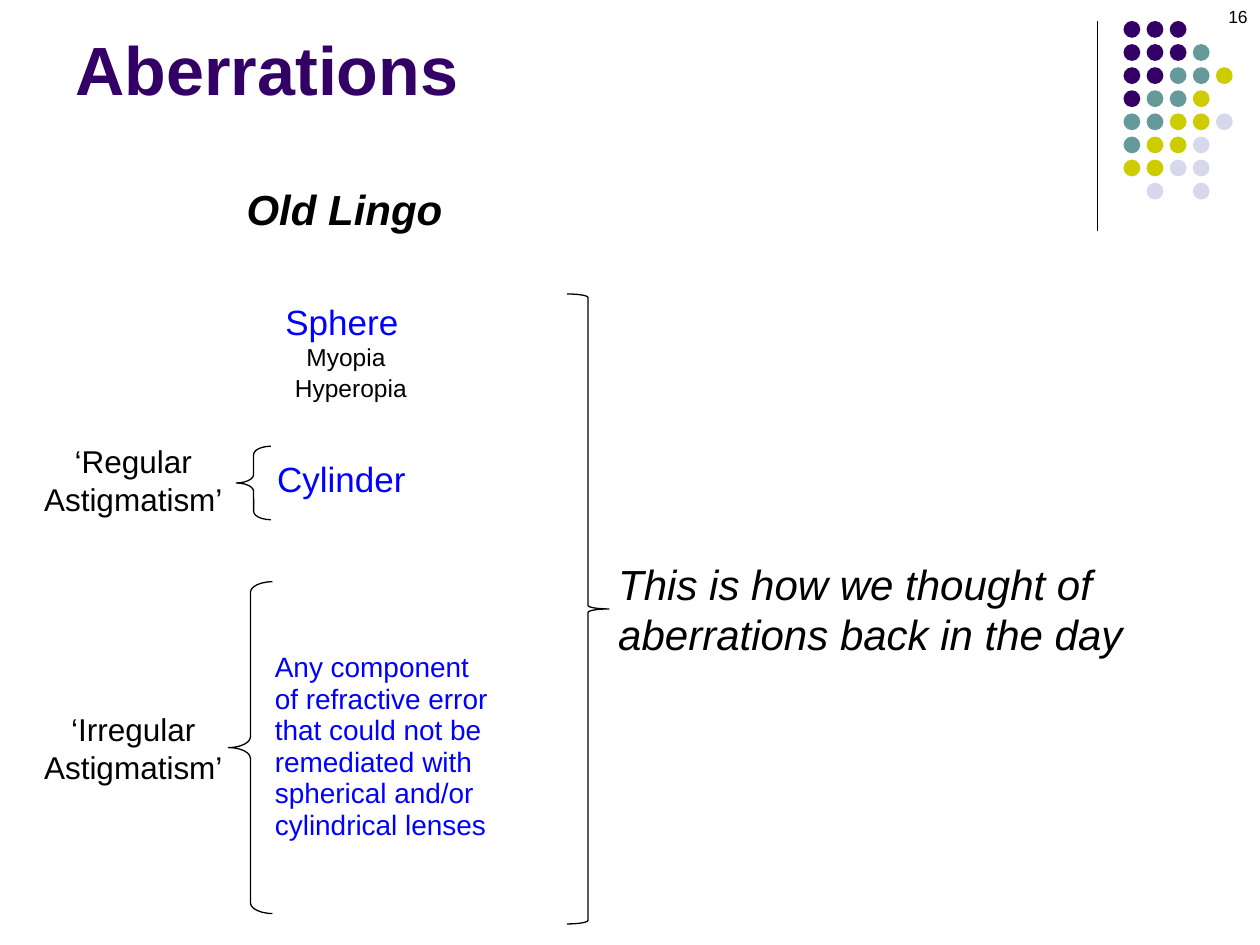
from pptx import Presentation
from pptx.dml.color import RGBColor
from pptx.enum.shapes import MSO_CONNECTOR as Link, MSO_SHAPE as Shape
from pptx.enum.text import MSO_ANCHOR as Anchor, PP_ALIGN as Align
from pptx.oxml.ns import qn
from pptx.util import Inches, Pt

COLORS = {"ink": "000000", "plum": "330066", "teal": "669999",
          "lime": "CCCC00", "mist": "D8D8EC", "blue": "0000FF"}
DOTS = ["ppp", "pppt", "ppttl", "pttl", "ttllm", "tllm", "llmm", " m m"]
HUES = {"p": "plum", "t": "teal", "l": "lime", "m": "mist"}
COLS, ROWS = 120, 90


class Deck:
    """Draws on one slide, with lengths in grid columns and rows."""

    def __init__(self):
        self.prs = Presentation()
        self.prs.slide_width, self.prs.slide_height = Inches(10), Inches(7.5)
        self.slide = self.prs.slides.add_slide(self.prs.slide_layouts[6])
        self.font = "Arial"

    def place(self, x, y, w, h):
        dx, dy = self.prs.slide_width / COLS, self.prs.slide_height / ROWS
        return [int(v) for v in (x * dx, y * dy, w * dx, h * dy)]

    def color(self, name):
        return RGBColor.from_string(COLORS[name])

    def text(self, box, words, size, color="ink", align=Align.LEFT, wrap=False,
             bold=False, italic=False, anchor=Anchor.TOP, pitch=None):
        frame = self.slide.shapes.add_textbox(*self.place(*box)).text_frame
        frame.text = words
        frame.word_wrap = wrap
        frame.vertical_anchor = anchor
        for para in frame.paragraphs:
            para.alignment = align
            if pitch:
                para.line_spacing = Pt(pitch)
            for run in para.runs:
                font = run.font
                font.name, font.size = self.font, Pt(size)
                font.bold, font.italic = bold, italic
                font.color.rgb = self.color(color)

    def dot(self, x, y, size, color):
        dot = self.slide.shapes.add_shape(
            Shape.OVAL, *self.place(x, y, size, size))
        dot.shadow.inherit = False
        dot.fill.solid()
        dot.fill.fore_color.rgb = self.color(color)
        dot.line.fill.background()

    def brace(self, kind, box, curl=None):
        brace = self.slide.shapes.add_shape(kind, *self.place(*box))
        brace.shadow.inherit = False
        brace.fill.background()
        self.stroke(brace.line)
        if curl:
            brace.adjustments[0] = curl

    def rule(self, x, y, h):
        left, top, _, high = self.place(x, y, 0, h)
        rule = self.slide.shapes.add_connector(
            Link.STRAIGHT, left, top, left, top + high)
        self.stroke(rule.line)
        props = rule._element.spPr
        props.append(props.makeelement(qn("a:effectLst"), {}))

    def stroke(self, line):
        line.color.rgb = self.color("ink")
        line.width = Pt(0.75)


def main():
    deck = Deck()
    deck.rule(104.5, 2, 20)
    for row, marks in enumerate(DOTS):
        for col, mark in enumerate(marks):
            if mark in HUES:
                deck.dot(107 + 2.2 * col, 2 + 2.2 * row, 1.6, HUES[mark])

    deck.text((6, 2, 99, 9), "Aberrations", 39, "plum", wrap=True,
              bold=True, anchor=Anchor.BOTTOM)
    deck.text((92, 0, 28, 6), "16", 10, align=Align.RIGHT, wrap=True)
    deck.text((22.3, 16.9, 21.2, 6), "Old Lingo", 24, bold=True, italic=True)

    deck.text((26, 28, 13.3, 5.3), "Sphere", 20, "blue")
    deck.text((28, 32, 10, 4.1), "Myopia", 14)
    deck.text((26.9, 34.9, 13.1, 4.1), "Hyperopia", 14)
    deck.text((25.2, 43, 14.8, 5.3), "Cylinder", 20, "blue")
    deck.text((25, 61.5, 22.9, 19.4),
              "Any component\nof refractive error\nthat could not be\n"
              "remediated with\nspherical and/or\ncylindrical lenses",
              16, "blue", pitch=18)

    for y, kind in ((41.5, "Regular"), (67, "Irregular")):
        deck.text((3, y, 19.4, 8.5), f"‘{kind}\nAstigmatism’", 18,
                  align=Align.CENTER)
    deck.brace(Shape.LEFT_BRACE, (22.5, 42.5, 3.3, 7), 0.242)
    deck.brace(Shape.LEFT_BRACE, (21.75, 55.4, 4.2, 31.6), 0.242)
    deck.brace(Shape.RIGHT_BRACE, (54, 28, 4, 60))
    deck.text((57.7, 52.6, 57, 10.9),
              "This is how we thought of aberrations back in the day",
              24, wrap=True, italic=True)
    deck.prs.save("out.pptx")


if __name__ == "__main__":
    main()
